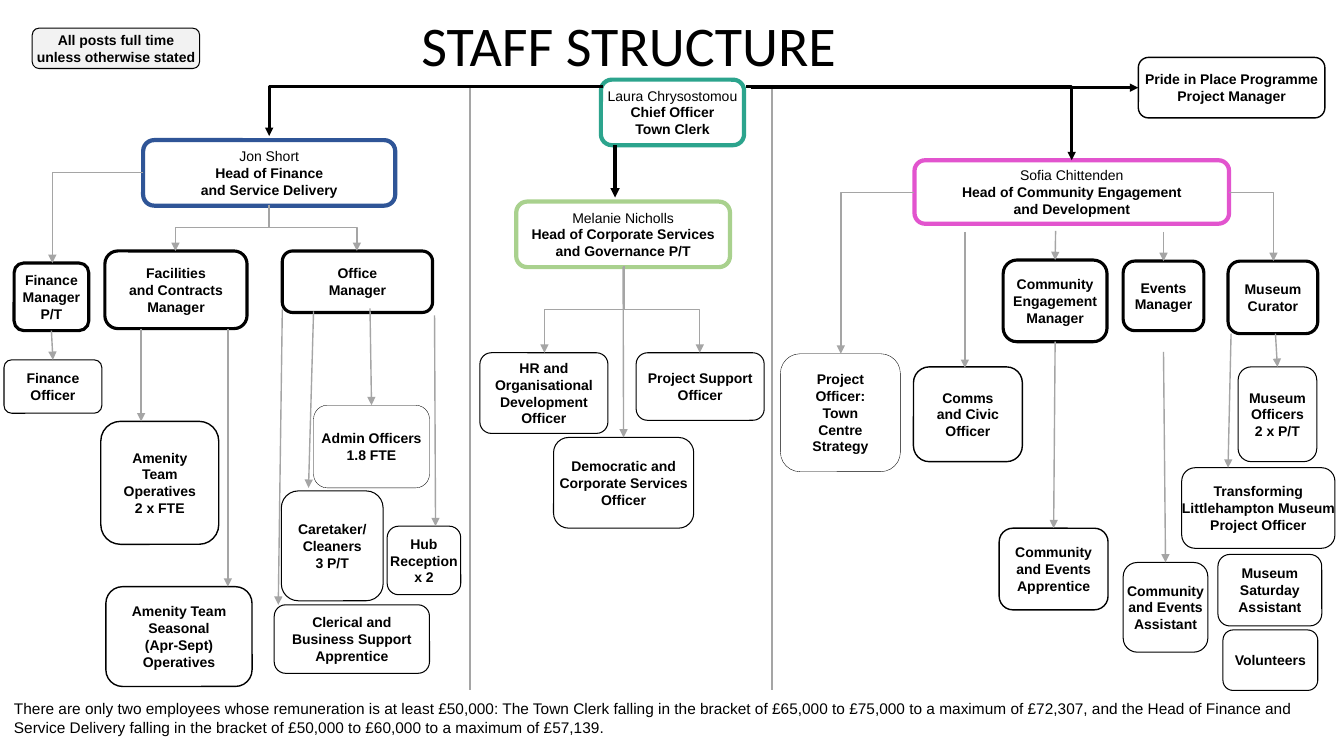
from collections import namedtuple

from lxml import etree
from pptx import Presentation
from pptx.dml.color import RGBColor
from pptx.enum.shapes import MSO_CONNECTOR, MSO_SHAPE
from pptx.enum.text import MSO_ANCHOR, PP_ALIGN
from pptx.oxml.ns import qn
from pptx.util import Inches, Pt

COLORS = {
    "black": "000000", "white": "FFFFFF", "grey": "A5A5A5", "note": "F2F2F2",
    "clerk": "2CA48D", "finance": "2F5597", "corporate": "A9D18E", "community": "E254CE",
}
Region = namedtuple("Region", "left top width height")
MANAGER = {"weight": 2.25}


def color(name):
    """Return the named palette colour."""
    return RGBColor.from_string(COLORS[name])


def style(paragraph, size, bold=False, name="Arial"):
    """Apply the font values to one paragraph."""
    for key, value in {"size": Pt(size), "bold": bold, "name": name}.items():
        setattr(paragraph.font, key, value)
    paragraph.font.color.rgb = color("black")


def post(slide, region, lines, at, weight=0.75, outline="black", fill="white",
         named=False, wrap=False, corner=0.167):
    """Draw one rounded post box at a place relative to its region."""
    left, top, width, height = at
    box = slide.shapes.add_shape(
        MSO_SHAPE.ROUNDED_RECTANGLE, Inches(region.left + left),
        Inches(region.top + top), Inches(width), Inches(height))
    box.adjustments[0] = corner
    box.shadow.inherit = False
    box.fill.solid()
    box.fill.fore_color.rgb = color(fill)
    box.line.color.rgb = color(outline)
    box.line.width = Pt(weight)
    frame = box.text_frame
    for key, value in {"text": lines, "word_wrap": wrap,
                       "vertical_anchor": MSO_ANCHOR.MIDDLE}.items():
        setattr(frame, key, value)
    for index, paragraph in enumerate(frame.paragraphs):
        paragraph.alignment = PP_ALIGN.CENTER
        style(paragraph, 10, bold=not (named and index == 0))
    return box


def link(slide, region, start, end, kind="line", tint="grey", weight=1, arrow=True,
         source=None, target=None, target_side=0):
    """Join two points of a region by a line, a corner or a vertical step."""
    (x1, y1), (x2, y2) = start, end
    if kind == "step":
        middle_x, middle_y = (x1 + x2) / 2, (y1 + y2) / 2
        across, down = abs(x2 - x1) / 2, (y2 - y1) / 2
        turn = 270 if x2 > x1 else 90
        reach = down if turn == 270 else -down
        x1, x2 = middle_x + reach, middle_x - reach
        y1, y2 = middle_y - across, middle_y + across
    shape_type = MSO_CONNECTOR.STRAIGHT if kind == "line" else MSO_CONNECTOR.ELBOW
    connector = slide.shapes.add_connector(
        shape_type, Inches(region.left + x1), Inches(region.top + y1),
        Inches(region.left + x2), Inches(region.top + y2))
    connector.line.color.rgb = color(tint)
    connector.line.width = Pt(weight)
    properties = connector.element.spPr
    if kind == "step":
        properties.find(qn("a:xfrm")).set("rot", str(turn * 60000))
    if kind == "corner":
        properties.find(qn("a:prstGeom")).set("prst", "bentConnector2")
    if arrow:
        etree.SubElement(properties.find(qn("a:ln")), qn("a:tailEnd"), type="triangle")
    etree.SubElement(properties, qn("a:effectLst"))
    if source is not None:
        connector.begin_connect(source, 2)
    if target is not None:
        connector.end_connect(target, target_side)


def divider(slide, region):
    """Draw the grey rule on the left edge of a region."""
    link(slide, region, (0, -0.14), (0, region.height), weight=1.5, arrow=False)


def add_title(slide, region):
    """Fill and place the slide title."""
    title = slide.shapes.title
    for key, value in {"left": region.left + 0.82, "top": region.top - 0.06,
                       "width": 10.83, "height": 1.07}.items():
        setattr(title, key, Inches(value))
    title.text_frame.text = "STAFF STRUCTURE"
    title.text_frame.vertical_anchor = MSO_ANCHOR.MIDDLE
    heading = title.text_frame.paragraphs[0]
    heading.alignment = PP_ALIGN.CENTER
    heading.line_spacing = 0.9
    style(heading, 40, name="Calibri")


def add_leadership(slide, region):
    """Draw the note, the chief officer and the lines to each department."""
    post(slide, region, "All posts full time\nunless otherwise stated",
         (0.32, 0.28, 1.66, 0.4), fill="note")
    post(slide, region, "Laura Chrysostomou\nChief Officer\nTown Clerk",
         (5.96, 0.79, 1.42, 0.65), weight=3, outline="clerk", named=True)
    programme = post(slide, region, "Pride in Place Programme\nProject Manager",
                     (11.29, 0.57, 1.85, 0.6), weight=1)
    trunk = {"tint": "black", "weight": 2}
    link(slide, region, (7.4, 0.86), (10.63, 1.59), "corner", **trunk)
    link(slide, region, (5.98, 0.86), (2.67, 1.35), "corner", **trunk)
    link(slide, region, (6.1, 1.44), (6.1, 1.96), tint="black", weight=2.25)
    link(slide, region, (7.45, 0.87), (11.29, 0.87), target=programme, target_side=1, **trunk)


def add_finance(slide, region):
    """Draw the finance and service delivery department."""
    post(slide, region, "Jon Short\nHead of Finance\nand Service Delivery",
         (1.42, 0.39, 2.5, 0.65), weight=3, outline="finance", named=True)
    manager = post(slide, region, "Finance\nManager\nP/T", (0.14, 1.61, 0.74, 0.67),
                   corner=0.142, **MANAGER)
    officer = post(slide, region, "Finance\nOfficer", (0.04, 2.57, 0.97, 0.53), corner=0.142)
    post(slide, region, "Facilities\nand Contracts\nManager", (1.04, 1.49, 1.41, 0.77), **MANAGER)
    post(slide, region, "Office\nManager", (2.8, 1.49, 1.49, 0.61), **MANAGER)
    post(slide, region, "Amenity Team\nOperatives\n2 x FTE", (1, 3.18, 1.17, 1.22),
         weight=1, wrap=True)
    post(slide, region, "Amenity Team Seasonal\n(Apr-Sept) Operatives",
         (1.05, 4.82, 1.45, 0.99), weight=1, wrap=True)
    post(slide, region, "Caretaker/\nCleaners\n3 P/T", (2.79, 3.87, 1.01, 1.09))
    admin = post(slide, region, "Admin Officers\n1.8 FTE", (3.11, 3.02, 1.15, 0.82), weight=0.25)
    post(slide, region, "Clerical and\nBusiness Support\nApprentice", (2.72, 5, 1.54, 0.68))
    post(slide, region, "Hub\nReception\nx 2", (3.84, 4.22, 0.73, 0.68))
    link(slide, region, (1.42, 0.71), (0.52, 1.61), "corner")
    for manager_x in (1.74, 3.54):
        link(slide, region, (2.67, 1.03), (manager_x, 1.49), "step")
    link(slide, region, (0.51, 2.28), (0.53, 2.57), source=manager, target=officer)
    link(slide, region, (3.67, 2.06), (3.68, 3.02), target=admin)
    for start, end in (((1.4, 2.26), (1.4, 3.18)), ((2.26, 2.26), (2.26, 4.82)),
                       ((3.11, 2.09), (3.06, 3.84)), ((4.31, 2.13), (4.32, 4.22)),
                       ((2.8, 2.07), (2.76, 5))):
        link(slide, region, start, end)


def add_corporate(slide, region):
    """Draw the corporate services and governance department."""
    divider(slide, region)
    head = post(slide, region, "Melanie Nicholls\nHead of Corporate Services\nand Governance P/T",
                (0.46, 1, 2.12, 0.65), weight=3, outline="corporate", named=True)
    post(slide, region, "HR and\nOrganisational\nDevelopment\nOfficer",
         (0.1, 2.5, 1.27, 0.8), corner=0.142)
    post(slide, region, "Project Support\nOfficer", (1.65, 2.5, 1.27, 0.67))
    democratic = post(slide, region, "Democratic and\nCorporate Services\nOfficer",
                      (0.83, 3.34, 1.39, 0.9))
    for officer_x in (0.74, 2.28):
        link(slide, region, (1.53, 1.64), (officer_x, 2.5), "step")
    link(slide, region, (1.53, 1.64), (1.53, 3.34), source=head, target=democratic)


def add_community(slide, region):
    """Draw the community engagement and development department."""
    divider(slide, region)
    post(slide, region, "Sofia Chittenden\nHead of Community Engagement\nand Development",
         (1.41, 0.59, 3.12, 0.63), weight=3, outline="community", named=True)
    post(slide, region, "Project Officer:\nTown\nCentre\nStrategy", (0.08, 2.51, 1.19, 1.17),
         weight=0.25, wrap=True)
    post(slide, region, "Comms\nand Civic\nOfficer", (1.4, 2.64, 1.08, 0.94), weight=1)
    engagement = post(slide, region, "Community\nEngagement\nManager",
                      (2.29, 1.58, 1.03, 0.81), **MANAGER)
    events = post(slide, region, "Events\nManager", (3.48, 1.59, 0.8, 0.69), **MANAGER)
    post(slide, region, "Museum\nCurator", (4.52, 1.59, 0.89, 0.72), **MANAGER)
    apprentice = post(slide, region, "Community\nand Events\nApprentice",
                      (2.25, 4.24, 1.08, 0.81), weight=1, wrap=True)
    assistant = post(slide, region, "Community\nand Events\nAssistant", (3.48, 4.58, 0.84, 0.89))
    officers = post(slide, region, "Museum\nOfficers\n2 x P/T", (4.62, 2.64, 0.78, 0.94))
    post(slide, region, "Transforming\nLittlehampton Museum\nProject Officer",
         (4.06, 3.64, 1.52, 0.8))
    post(slide, region, "Museum\nSaturday\nAssistant", (4.42, 4.5, 1.03, 0.71))
    post(slide, region, "Volunteers", (4.47, 5.25, 0.94, 0.6))
    link(slide, region, (1.41, 0.91), (0.68, 2.51), "corner")
    link(slide, region, (4.53, 0.91), (4.97, 1.59), "corner")
    link(slide, region, (1.91, 1.3), (1.91, 2.65))
    link(slide, region, (4.55, 2.31), (4.52, 3.64))
    link(slide, region, (2.81, 2.39), (2.79, 4.24), source=engagement, target=apprentice)
    for start, target in (((2.81, 1.29), engagement), ((3.88, 1.3), events),
                          ((3.88, 2.49), assistant), ((4.99, 2.31), officers)):
        link(slide, region, start, start, target=target)


def add_footnote(slide, region):
    """Write the remuneration statement."""
    note = slide.shapes.add_textbox(*(Inches(length) for length in region))
    note.text_frame.word_wrap = True
    note.text_frame.text = (
        "There are only two employees whose remuneration is at least £50,000: The Town Clerk "
        "falling in the bracket of £65,000 to £75,000 to a maximum of £72,307, and the Head of "
        "Finance and Service Delivery falling in the bracket of £50,000 to £60,000 to a maximum "
        "of £57,139.")
    style(note.text_frame.paragraphs[0], 11)


def main():
    """Build and save the staff structure slide."""
    deck = Presentation()
    deck.slide_width, deck.slide_height = Inches(13.33), Inches(7.5)
    slide = deck.slides.add_slide(deck.slide_layouts[5])
    header = Region(0, 0, 13.33, 1.44)
    add_title(slide, header)
    add_finance(slide, Region(0, 1, 4.66, 5.85))
    add_corporate(slide, Region(4.66, 1, 3, 5.85))
    add_community(slide, Region(7.66, 1, 5.67, 5.85))
    add_leadership(slide, header)
    add_footnote(slide, Region(0.04, 6.89, 13.2, 0.47))
    deck.save("out.pptx")


if __name__ == "__main__":
    main()
